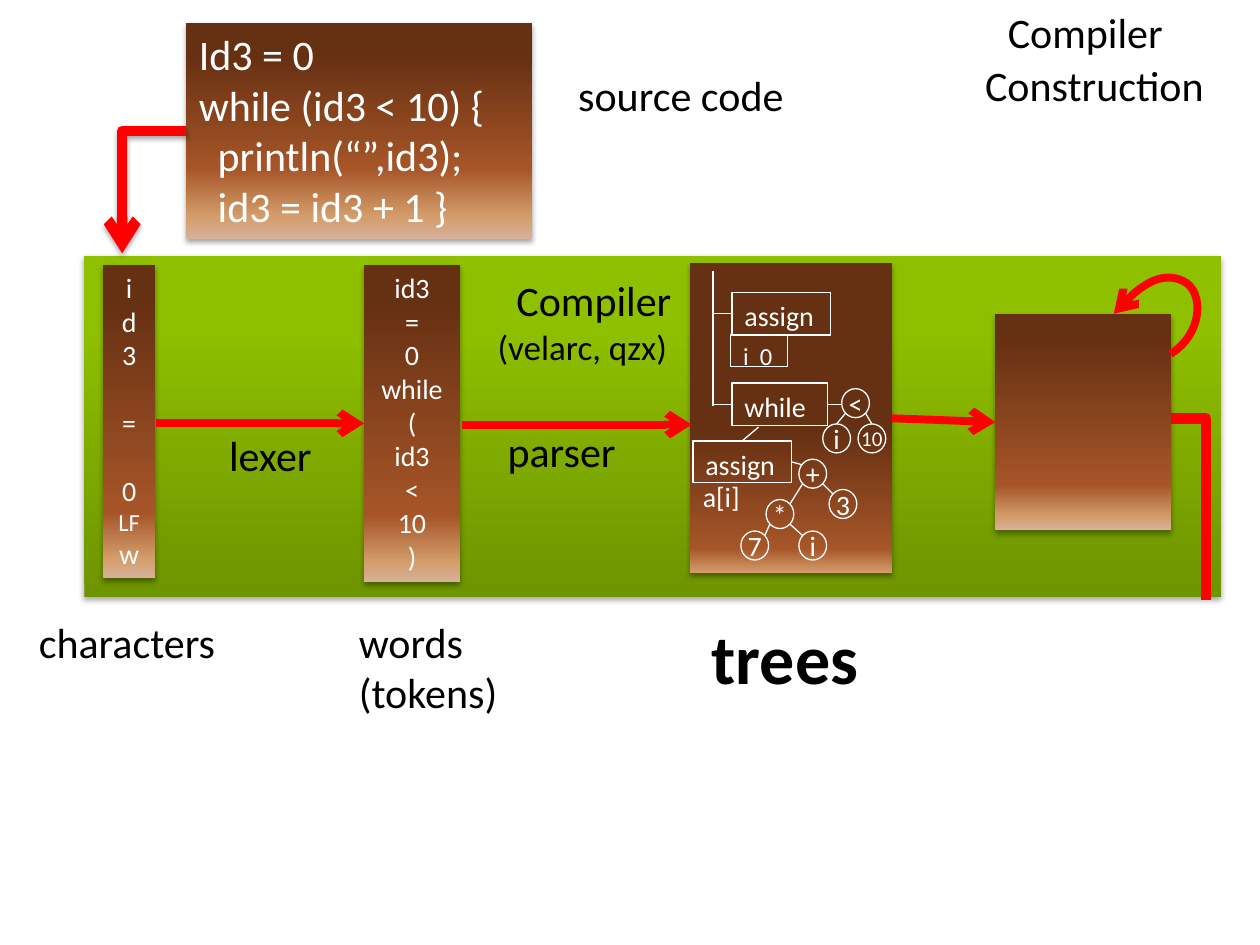
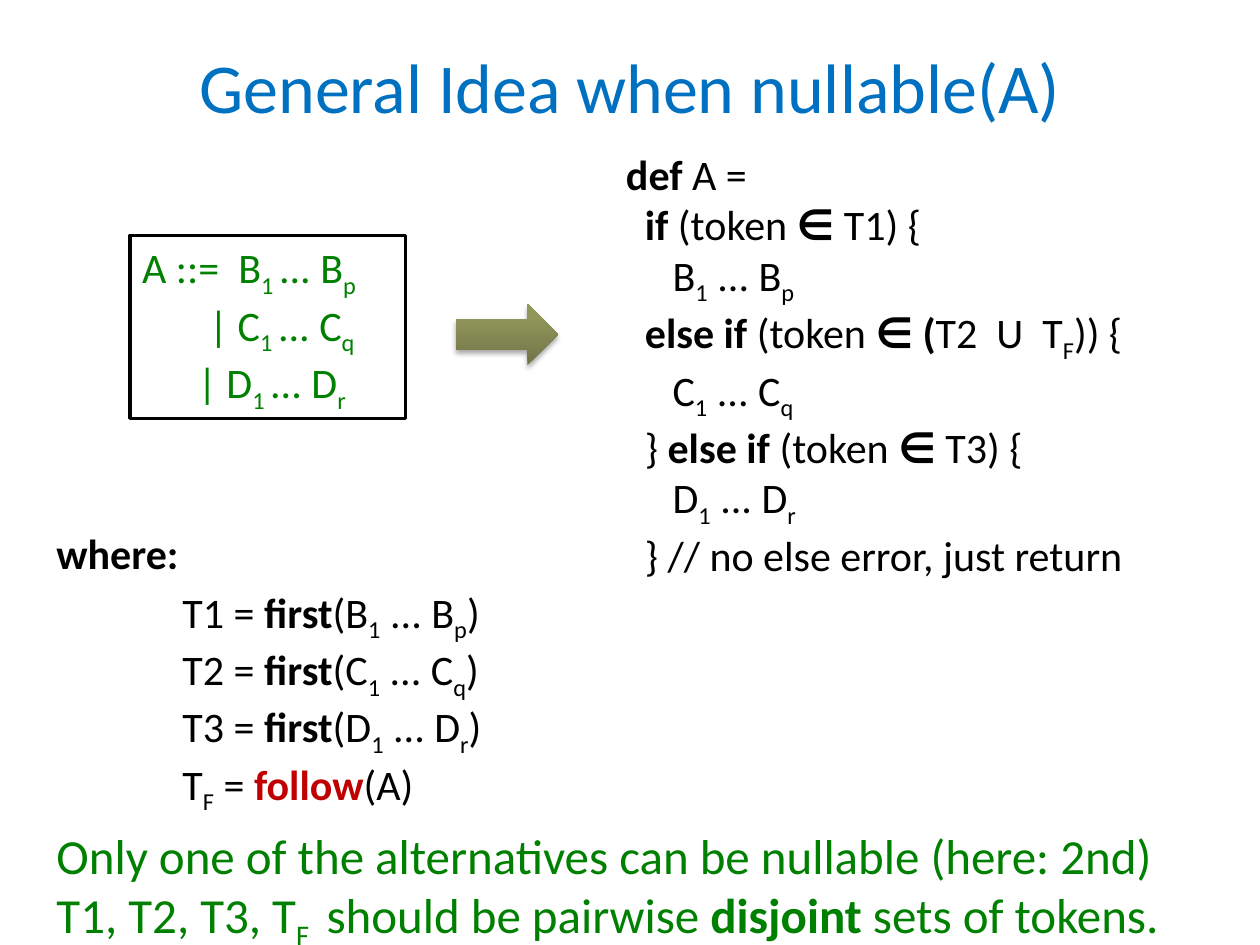
from dataclasses import dataclass

from lxml import etree
from pptx import Presentation
from pptx.dml.color import RGBColor
from pptx.enum.shapes import MSO_CONNECTOR, MSO_SHAPE
from pptx.enum.text import MSO_ANCHOR, PP_ALIGN
from pptx.oxml.ns import qn
from pptx.util import Inches, Pt

RECTANGLE, ELLIPSE, RIGHT_ARROW = MSO_SHAPE.RECTANGLE, MSO_SHAPE.OVAL, MSO_SHAPE.RIGHT_ARROW
STRAIGHT, ELBOW = MSO_CONNECTOR.STRAIGHT, MSO_CONNECTOR.ELBOW
LEFT, CENTER = PP_ALIGN.LEFT, PP_ALIGN.CENTER
TOP, MIDDLE = MSO_ANCHOR.TOP, MSO_ANCHOR.MIDDLE
TOP_SIDE, LEFT_SIDE, RIGHT_SIDE = 0, 1, 3
COLUMNS, ROWS, CELL = 10, 7.5, Inches(1)
NODE_WIDTH, NODE_HEIGHT, NODE_DIAGONAL = 0.22, 0.23, 0.08
BLANK_LINE = 19.5


@dataclass(frozen=True)
class Theme:
    font: str = "Calibri"
    black: str = "000000"
    white: str = "FFFFFF"
    red: str = "FF0000"
    dark_red: str = "C00000"
    green: str = "008000"
    blue: str = "0070C0"
    title: int = 40
    note: int = 28
    body: int = 24
    detail: int = 20
    token: int = 16
    small: int = 14
    tiny: int = 12
    hairline: float = 0.75
    outline: float = 2
    flow: float = 4.5
    heavy: float = 6
    band: tuple = ((0, "6E9400"), (80, "8FC000"), (100, "90C100"))
    source: tuple = ((0, "D6B19C"), (10, "D49E6C"), (33, "A65528"), (85, "663012"))
    stage: tuple = ((0, "D6B19C"), (6, "D49E6C"), (21, "A65528"), (89, "663012"))
    tree: tuple = ((0, "D6B19C"), (0, "D49E6C"), (8, "A65528"), (46, "663012"))
    olive: tuple = ((0, "707446"), (80, "91965B"), (100, "93985A"))


THEME = Theme()


@dataclass(frozen=True)
class Line:
    text: str
    size: int = THEME.body
    color: str = THEME.black
    indent: float = 0
    before: float = 0
    accent: str = ""


def cells(*counts):
    return [int(count * CELL) for count in counts]


def rgb(color):
    return RGBColor.from_string(color)


def add_rich_run(paragraph, text, line, bold, subscript):
    run = paragraph.add_run()
    run.text = text
    font = run.font
    font.name, font.size, font.bold = THEME.font, Pt(line.size), bold
    font.color.rgb = rgb(THEME.dark_red if text == line.accent else line.color)
    if subscript:
        run._r.get_or_add_rPr().set("baseline", "-25000")


def write(shape, lines, align=LEFT, anchor=TOP, wrap=True):
    frame = shape.text_frame
    frame.word_wrap, frame.vertical_anchor = wrap, anchor
    for index, line in enumerate(lines):
        paragraph = frame.add_paragraph() if index else frame.paragraphs[0]
        paragraph.alignment = align
        paragraph.space_before = Pt(line.before)
        properties = paragraph._p.get_or_add_pPr()
        properties.set("marL", str(cells(line.indent)[0]))
        properties.set("indent", "0")
        for bold, part in enumerate(line.text.split("^")):
            for subscript, piece in enumerate(part.split("~")):
                if piece:
                    add_rich_run(paragraph, piece, line, bool(bold % 2), bool(subscript % 2))
    return frame


def add_text(slide, area, lines, align=LEFT, anchor=TOP, wrap=True):
    return write(slide.shapes.add_textbox(*cells(*area)), lines, align, anchor, wrap)


def add_label(slide, area, *texts, size=THEME.body, color=THEME.black):
    add_text(slide, area, [Line(text, size, color) for text in texts], wrap=False)


def add_shadow(effects):
    shadow = etree.SubElement(effects, qn("a:outerShdw"), blurRad="40000", dist="23000",
                              dir="5400000", rotWithShape="0")
    color = etree.SubElement(shadow, qn("a:srgbClr"), val=THEME.black)
    etree.SubElement(color, qn("a:alpha"), val="35000")


def add_plain_shape(slide, kind, area, line_width, line_color=THEME.white, fill=None):
    shape = slide.shapes.add_shape(kind, *cells(*area))
    shape.shadow.inherit = False
    if fill:
        shape.fill.solid()
        shape.fill.fore_color.rgb = rgb(fill)
    else:
        shape.fill.background()
    shape.line.color.rgb, shape.line.width = rgb(line_color), Pt(line_width)
    return shape


def add_shaded_shape(slide, kind, area, stops):
    shape = slide.shapes.add_shape(kind, *cells(*area))
    shape.line.fill.background()
    shape.fill.gradient()
    shape.fill.gradient_angle = 90
    stop_list = shape.element.spPr.find(qn("a:gradFill")).find(qn("a:gsLst"))
    for stop in list(stop_list):
        stop_list.remove(stop)
    for position, color in stops:
        stop = etree.SubElement(stop_list, qn("a:gs"), pos=str(position * 1000))
        etree.SubElement(stop, qn("a:srgbClr"), val=color)
    shape.shadow.inherit = False
    add_shadow(shape.element.spPr.find(qn("a:effectLst")))
    return shape


def style_line(shape, color, width, arrow):
    shape.line.color.rgb, shape.line.width = rgb(color), Pt(width)
    if arrow:
        etree.SubElement(shape.line._get_or_add_ln(), qn("a:tailEnd"), type="arrow")


def add_line(slide, start, end, color=THEME.white, width=THEME.hairline,
             arrow=False, bent=False, shadow=False):
    connector = slide.shapes.add_connector(ELBOW if bent else STRAIGHT, *cells(*start, *end))
    properties = connector.element.spPr
    if bent:
        properties.find(qn("a:prstGeom")).set("prst", "bentConnector2")
    style_line(connector, color, width, arrow)
    effects = etree.SubElement(properties, qn("a:effectLst"))
    if shadow:
        add_shadow(effects)
    return connector


def curve_points(start, control_one, control_two, end, steps=16):
    for step in range(1, steps + 1):
        t = step / steps
        weights = ((1 - t) ** 3, 3 * t * (1 - t) ** 2, 3 * t * t * (1 - t), t ** 3)
        points = (start, control_one, control_two, end)
        yield cells(*(sum(w * p[axis] for w, p in zip(weights, points)) for axis in (0, 1)))


def add_loop_arrow(slide):
    start, crest, end = (9.29, 2.81), (9.39, 2.23), (8.84, 2.49)
    builder = slide.shapes.build_freeform(*cells(*start))
    builder.add_line_segments([*curve_points(start, (9.55, 2.65), (9.56, 2.31), crest),
                               *curve_points(crest, (9.22, 2.15), (9.05, 2.25), end)], close=False)
    loop = builder.convert_to_shape()
    loop.shadow.inherit = False
    loop.fill.background()
    style_line(loop, THEME.red, THEME.flow, True)


def add_tree_box(slide, area, text, size=THEME.token):
    box = add_plain_shape(slide, RECTANGLE, area, THEME.hairline)
    write(box, [Line(text, size, THEME.white)], wrap=False)
    return box


def add_node(slide, center, text, size=THEME.token):
    x, y = center
    area = (x - NODE_WIDTH / 2, y - NODE_HEIGHT / 2, NODE_WIDTH, NODE_HEIGHT)
    node = add_plain_shape(slide, ELLIPSE, area, THEME.hairline)
    frame = write(node, [Line(text, size, THEME.white)], CENTER, MIDDLE, False)
    frame.margin_left = frame.margin_right = frame.margin_top = frame.margin_bottom = 0


def add_edge(slide, parent, child, to_top=False):
    side = NODE_DIAGONAL if child[0] > parent[0] else -NODE_DIAGONAL
    start = (parent[0] + side, parent[1] + NODE_DIAGONAL)
    end = ((child[0], child[1] - NODE_HEIGHT / 2) if to_top
           else (child[0] - side, child[1] - NODE_DIAGONAL))
    add_line(slide, start, end)


def add_syntax_tree(slide):
    first_assign = add_tree_box(slide, (5.81, 2.32, 0.78, 0.34), "assign")
    while_box = add_tree_box(slide, (5.81, 3.04, 0.76, 0.34), "while")
    add_tree_box(slide, (5.8, 2.66, 0.45, 0.25), "i  0", THEME.small)
    inner_assign = add_tree_box(slide, (5.5, 3.5, 0.78, 0.33), "assign")
    add_label(slide, (5.48, 3.76, 0.5, 0.37), "a[i]", size=THEME.token, color=THEME.white)

    add_line(slide, (5.66, 2.15), (5.66, 3.22))
    for box, row in ((first_assign, 2.49), (while_box, 3.21)):
        add_line(slide, (5.81, row), (5.66, row)).begin_connect(box, LEFT_SIDE)
    add_line(slide, (5.89, 3.5), (6.02, 3.39)).begin_connect(inner_assign, TOP_SIDE)
    add_line(slide, (6.28, 3.66), (6.37, 3.69)).begin_connect(inner_assign, RIGHT_SIDE)
    add_line(slide, (6.68, 3.21), (6.57, 3.21)).end_connect(while_box, RIGHT_SIDE)

    less, index, ten = (6.79, 3.2), (6.64, 3.48), (6.92, 3.48)
    plus, times, three = (6.45, 3.76), (6.19, 4.08), (6.69, 4)
    seven, factor = (5.99, 4.33), (6.45, 4.33)
    for center, text in ((less, "<"), (index, "i"), (plus, "+"), (times, "*"),
                         (three, "3"), (seven, "7"), (factor, "i")):
        add_node(slide, center, text)
    add_node(slide, ten, "10", THEME.tiny)
    for parent, child in ((plus, times), (plus, three), (times, seven), (times, factor)):
        add_edge(slide, parent, child)
    for child in (index, ten):
        add_edge(slide, less, child, to_top=True)


def add_pipeline_slide(slide):
    band = add_shaded_shape(slide, RECTANGLE, (0.67, 2.03, 9.02, 2.71), THEME.band)
    frame = write(band, [Line("Compiler", indent=3.33),
                         Line("(velarc, qzx)", THEME.detail, indent=3.18)])
    frame.margin_top = cells(0.15)[0]

    source = add_shaded_shape(slide, RECTANGLE, (1.48, 0.18, 2.74, 1.72), THEME.source)
    write(source, [Line(text, color=THEME.white, indent=indent) for text, indent in (
        ("Id3 = 0", 0), ("while (id3 < 10) {", 0),
        ("println(“”,id3);", 0.15), ("id3 = id3 + 1 }", 0.15))])
    add_line(slide, (1.48, 1.04), (0.97, 2.01), THEME.red, THEME.heavy,
             arrow=True, bent=True, shadow=True)

    characters = add_shaded_shape(slide, RECTANGLE, (0.82, 2.1, 0.41, 2.49), THEME.stage)
    write(characters, [Line(text, THEME.small if text == "LF" else THEME.token, THEME.white,
                            before=BLANK_LINE if text in "=0" else 0)
                       for text in ("i", "d", "3", "=", "0", "LF", "w")], CENTER, wrap=False)
    words = add_shaded_shape(slide, RECTANGLE, (2.89, 2.1, 0.76, 2.52), THEME.stage)
    write(words, [Line(text, THEME.token, THEME.white)
                  for text in "id3 = 0 while ( id3 < 10 )".split()], CENTER, wrap=False)
    trees = add_shaded_shape(slide, RECTANGLE, (5.48, 2.09, 1.6, 2.46), THEME.tree)
    add_syntax_tree(slide)
    result = add_shaded_shape(slide, RECTANGLE, (7.9, 2.49, 1.39, 1.72), THEME.stage)

    flow = {"color": THEME.red, "width": THEME.flow, "arrow": True}
    add_line(slide, (1.24, 3.36), (2.89, 3.36), **flow).end_connect(words, LEFT_SIDE)
    add_line(slide, (3.67, 3.37), (5.49, 3.37), **flow)
    hand_over = add_line(slide, (7.08, 3.32), (7.9, 3.35), **flow)
    hand_over.begin_connect(trees, RIGHT_SIDE)
    hand_over.end_connect(result, LEFT_SIDE)
    add_line(slide, (9.29, 3.32), (9.57, 4.76), THEME.red, THEME.heavy, bent=True)
    add_loop_arrow(slide)

    for area, *texts in (((4.49, 0.5, 1.92, 0.5), "source code"),
                         ((7.9, 0, 1.8, 0.5), "Compiler"),
                         ((7.72, 0.42, 2.1, 0.5), "Construction"),
                         ((1.72, 3.36, 0.86, 0.5), "lexer"),
                         ((3.93, 3.33, 1.07, 0.5), "parser"),
                         ((0.21, 4.84, 1.63, 0.5), "characters"),
                         ((2.75, 4.84, 1.33, 0.91), "words", "(tokens)")):
        add_label(slide, area, *texts)
    add_label(slide, (5.55, 4.83, 1.38, 0.77), "^trees^", size=THEME.title)


def add_nullable_slide(slide):
    add_text(slide, (0.5, 0.17, 9, 1.01),
             [Line("General Idea when nullable(A)", THEME.title, THEME.blue)], CENTER, MIDDLE)

    grammar = add_plain_shape(slide, RECTANGLE, (1.03, 1.87, 2.19, 1.45),
                              THEME.outline, THEME.black, THEME.white)
    write(grammar, [Line(text, color=THEME.green, indent=indent) for text, indent in (
        ("A ::=  B~1 ~... B~p~", 0), ("| C~1 ~... C~q~", 0.53), ("| D~1 ~... D~r~", 0.44))])
    add_shaded_shape(slide, RIGHT_ARROW, (3.62, 2.41, 0.81, 0.49), THEME.olive)

    add_text(slide, (4.87, 1.13, 5.04, 3.47), [Line(text, indent=indent) for text, indent in (
        ("^def^ A =", 0),
        ("^if^ (token ^∈ ^T1) {", 0.15),
        ("B~1~ ... B~p~", 0.37),
        ("^else if^ (token^ ∈ (^T2  U  T~F~)) {", 0.15),
        ("C~1~ ... C~q~", 0.37),
        ("} ^else if^ (token^ ∈ ^T3) {", 0.15),
        ("D~1~ ... D~r~", 0.37),
        ("} // no else error, just return", 0.15))])

    add_text(slide, (0.35, 4.14, 9.24, 2.11), [
        Line("^where:^"),
        Line("T1 = ^first^(B~1~ ... B~p~)", indent=1, before=4.5),
        Line("T2 = ^first^(C~1~ ... C~q~)", indent=1),
        Line("T3 = ^first^(D~1~ ... D~r~)", indent=1),
        Line("T~F~ = ^follow^(A)", indent=1, accent="follow"),
        Line("Only one of the alternatives can be nullable (here: 2nd) T1, T2, T3, T~F ~"
             " should be pairwise ^disjoint ^sets of tokens.",
             THEME.note, THEME.green, before=5.6)])


def main():
    presentation = Presentation()
    presentation.slide_width, presentation.slide_height = cells(COLUMNS, ROWS)
    blank = presentation.slide_layouts[6]
    for build in (add_pipeline_slide, add_nullable_slide):
        build(presentation.slides.add_slide(blank))
    presentation.save("out.pptx")


if __name__ == "__main__":
    main()
